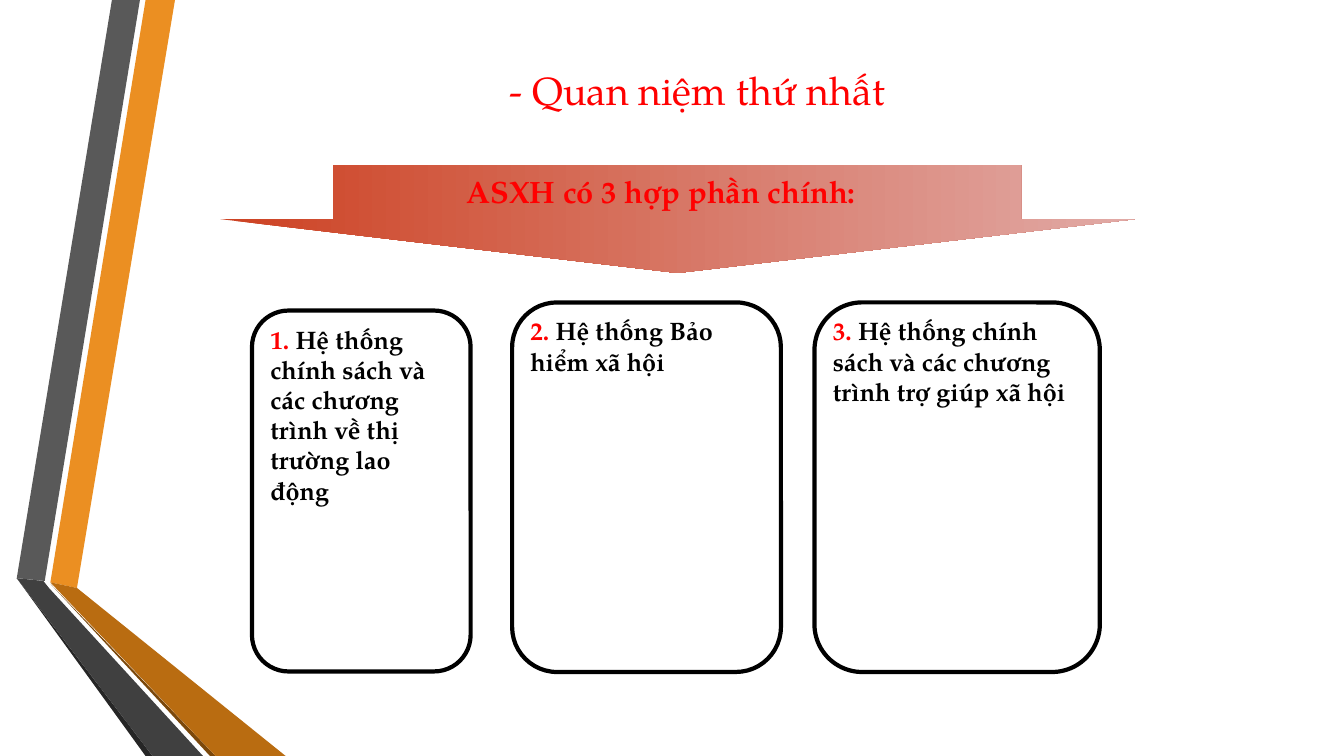
"""Build a slide showing the three components of social security."""
import pptx
import pptx.dml.color
import pptx.enum.shapes
import pptx.enum.text
import pptx.util

Pt = pptx.util.Pt
SHAPES = pptx.enum.shapes.MSO_SHAPE
ALIGN = pptx.enum.text.PP_ALIGN
ANCHOR = pptx.enum.text.MSO_ANCHOR
FONT = "TeX Gyre Pagella"
COLORS = {
    "red": "FF0000",
    "black": "000000",
    "orange": "EB8F22",
    "gray": "595959",
    "gray_edge": "262626",
    "orange_edge": "7B480B",
    "orange_fold": "B96C11",
    "gray_fold": "404040",
    "banner_start": "CD4223",
    "banner_end": "E1AAA6",
}
RIBBONS = [
    ("orange", [(36, 416.2), (55.4, 419.8), (124.6, 0), (104.4, 0)]),
    ("gray", [(100.1, 0), (79.9, 0), (11.5, 412.6), (31.7, 415.4)]),
    ("gray_edge", [(11.5, 412.6), (104.4, 540), (108.7, 540)]),
    ("orange_edge", [(36, 416.9), (149.8, 540), (154.1, 540)]),
    ("orange_fold", [(36, 416.5), (154.1, 540), (203.8, 540), (55.4, 419.8)]),
    ("gray_fold", [(145.4, 540), (34.6, 419.8), (31, 415.4), (11.5, 412.6), (108.7, 540)]),
]
CARDS = [
    ("1. ", "Hệ thống chính sách và các chương trình về thị trường lao động",
     (180, 221.8, 156.2, 257.8), (142.6, 136.8)),
    ("2. ", "Hệ thống Bảo hiểm xã hội",
     (365.8, 216, 192, 264), (180, 50.4)),
    ("3. ", "Hệ thống chính sách và các chương trình trợ giúp xã hội",
     (581.8, 216, 203.8, 264), (198, 72.7)),
]


def color(name):
    """Return the named colour."""
    return pptx.dml.color.RGBColor.from_string(COLORS[name])


def style(paragraph, size, bold):
    """Set the font shared by all runs of a paragraph."""
    paragraph.font.name = FONT
    paragraph.font.size = Pt(size)
    paragraph.font.bold = bold


def add_ribbon(slide, fill, points):
    """Draw one flat piece of the folded ribbons."""
    builder = slide.shapes.build_freeform(*points[0], scale=Pt(1))
    builder.add_line_segments(points[1:], close=True)
    shape = builder.convert_to_shape()
    shape.shadow.inherit = False
    shape.fill.solid()
    shape.fill.fore_color.rgb = color(fill)
    shape.line.fill.background()


def set_title(slide, text):
    """Place and format the slide title."""
    title = slide.shapes.title
    title.left, title.top, title.width, title.height = map(Pt, (156, 42, 684, 44.6))
    title.text_frame.text = text
    title.text_frame.vertical_anchor = ANCHOR.MIDDLE
    paragraph = title.text_frame.paragraphs[0]
    paragraph.alignment = ALIGN.CENTER
    style(paragraph, 28, False)
    paragraph.font.color.rgb = color("red")


def add_banner(slide, text):
    """Add the wide gradient arrow with its heading."""
    shape = slide.shapes.add_shape(SHAPES.DOWN_ARROW, *map(Pt, (157, 118, 653.8, 77)))
    shape.adjustments[0] = 0.751
    shape.adjustments[1] = 0.5
    shape.shadow.inherit = False
    shape.line.fill.background()
    shape.fill.gradient()
    shape.fill.gradient_angle = 0
    for stop, position, name in zip(shape.fill.gradient_stops, (0, 1),
                                    ("banner_start", "banner_end")):
        stop.position = position
        stop.color.rgb = color(name)
    frame = shape.text_frame
    frame.text = text
    frame.vertical_anchor = ANCHOR.MIDDLE
    frame.margin_left = Pt(95)
    frame.margin_bottom = Pt(14)
    paragraph = frame.paragraphs[0]
    paragraph.alignment = ALIGN.LEFT
    style(paragraph, 22, True)
    paragraph.font.color.rgb = color("red")


def add_card(slide, number, text, box, text_size):
    """Add a rounded outline grouped with its numbered text."""
    group = slide.shapes.add_group_shape()
    outline = group.shapes.add_shape(SHAPES.ROUNDED_RECTANGLE, *map(Pt, box))
    outline.adjustments[0] = 0.167
    outline.shadow.inherit = False
    outline.fill.background()
    outline.line.color.rgb = color("black")
    outline.line.width = Pt(3)
    left, top = box[:2]
    label = group.shapes.add_textbox(Pt(left + 6), Pt(top + 6), *map(Pt, text_size))
    frame = label.text_frame
    frame.word_wrap = True
    frame.auto_size = pptx.enum.text.MSO_AUTO_SIZE.SHAPE_TO_FIT_TEXT
    paragraph = frame.paragraphs[0]
    style(paragraph, 18, True)
    for content, name in ((number, "red"), (text, "black")):
        run = paragraph.add_run()
        run.text = content
        run.font.color.rgb = color(name)


def main():
    """Build and save the slide."""
    presentation = pptx.Presentation()
    presentation.slide_width = Pt(960)
    presentation.slide_height = Pt(540)
    slide = presentation.slides.add_slide(presentation.slide_layouts[5])
    for fill, points in RIBBONS:
        add_ribbon(slide, fill, points)
    set_title(slide, "- Quan niệm thứ nhất")
    add_banner(slide, "ASXH có 3 hợp phần chính:")
    for card in CARDS:
        add_card(slide, *card)
    presentation.save("out.pptx")


if __name__ == "__main__":
    main()
